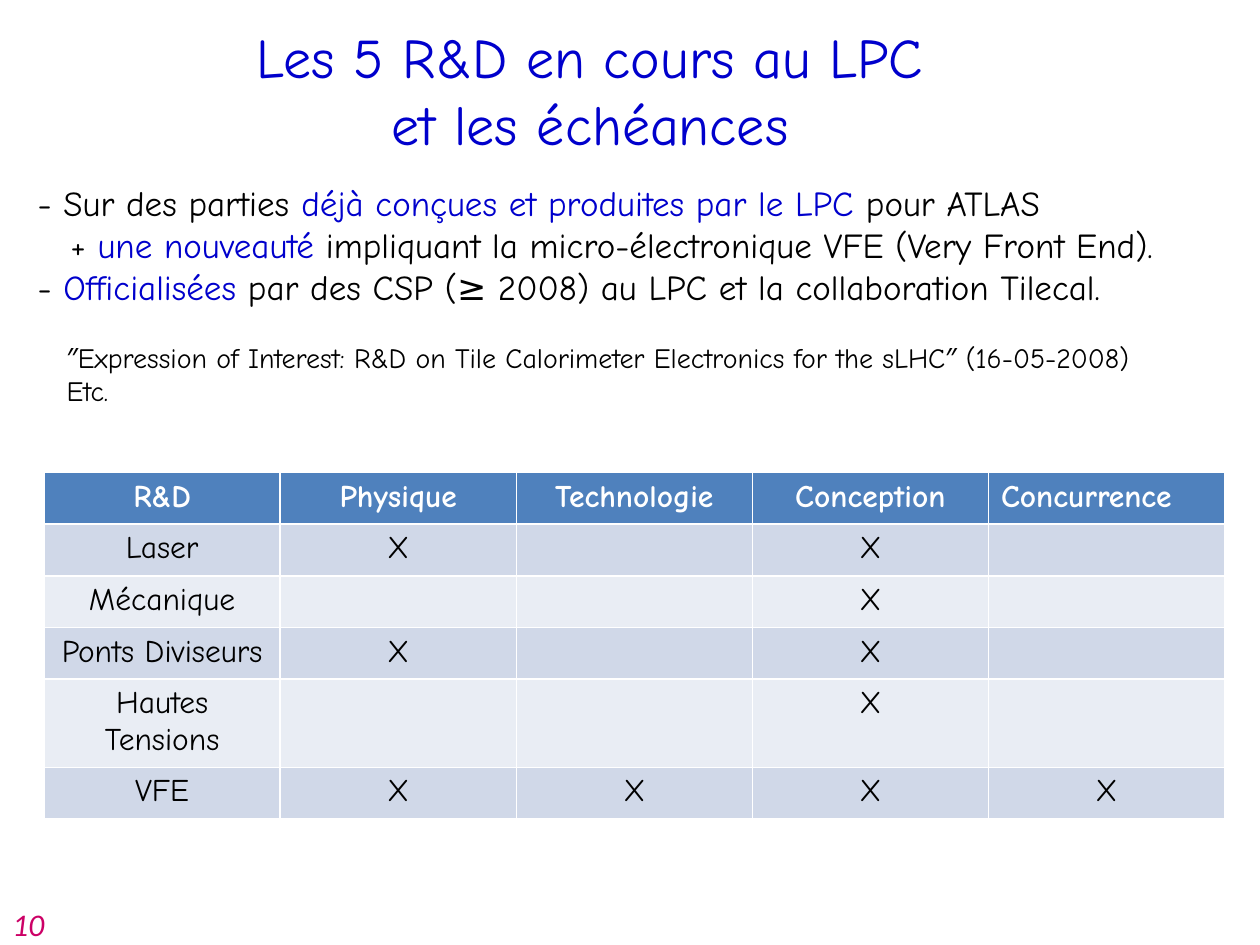
from lxml import etree
from pptx import Presentation
from pptx import util as u
from pptx.dml.color import RGBColor
from pptx.enum import text
from pptx.oxml import ns

BLUE = RGBColor(0x00, 0x00, 0xCC)
BLACK = RGBColor(0x00, 0x00, 0x00)
WHITE = RGBColor(0xFF, 0xFF, 0xFF)
PINK = RGBColor(0xCC, 0x00, 0x66)
HEADER_FILL = RGBColor(0x4F, 0x81, 0xBD)
BAND_FILLS = [RGBColor(0xE9, 0xED, 0xF4), RGBColor(0xD0, 0xD8, 0xE8)]
CENTER, LEFT = text.PP_ALIGN.CENTER, text.PP_ALIGN.LEFT

presentation = Presentation()
presentation.slide_width = u.Inches(10)
presentation.slide_height = u.Inches(7.5)
slide = presentation.slides.add_slide(presentation.slide_layouts[6])


def write_run(paragraph, words, color, **formats):
    run = paragraph.add_run()
    run.text = words
    run.font.color.rgb = color
    for name, value in ({"name": "Comic Neue"} | formats).items():
        setattr(run.font, name, value)
    return run


def add_text(box, lines, align=LEFT, wrap=True, **formats):
    shape = slide.shapes.add_textbox(*(u.Inches(length) for length in box))
    frame = shape.text_frame
    frame.word_wrap = wrap
    frame.auto_size = text.MSO_AUTO_SIZE.SHAPE_TO_FIT_TEXT
    for index, line in enumerate(lines):
        paragraph = frame.paragraphs[0] if index == 0 else frame.add_paragraph()
        paragraph.alignment = align
        for words, color in line:
            write_run(paragraph, words, color, **formats)
    return frame


title = add_text(
    (1.82, 0.13, 5.73, 1.18),
    [[("Les 5 R&D en cours au LPC", BLUE)], [("et les échéances", BLUE)]],
    CENTER, size=u.Pt(32))
for paragraph in title.paragraphs:
    properties = paragraph.runs[0].font.fill._xPr
    effects = etree.Element(ns.qn("a:effectLst"))
    shadow = etree.SubElement(effects, ns.qn("a:outerShdw"), blurRad="38100",
                              dist="38100", dir="2700000", algn="tl")
    tint = etree.SubElement(shadow, ns.qn("a:srgbClr"), val="C0C0C0")
    properties.find(ns.qn("a:solidFill")).addnext(effects)

body = add_text(
    (0.2, 1.39, 9.64, 1.11),
    [[("- Sur des parties ", BLACK),
      ("déjà conçues et produites par le LPC ", BLUE), ("pour ATLAS", BLACK)],
     [("+ ", BLACK), ("une nouveauté ", BLUE),
      ("impliquant la micro-électronique VFE (Very Front End).", BLACK)],
     [("- ", BLACK), ("Officialisées", BLUE),
      (" par des CSP (≥ 2008) au LPC et la collaboration Tilecal.", BLACK)]],
    size=u.Pt(20))
body.paragraphs[1]._p.get_or_add_pPr().set("marL", str(u.Inches(0.26)))

rows = [
    ["R&D", "Physique", "Technologie", "Conception", "Concurrence"],
    ["Laser", "X", "", "X", ""],
    ["Mécanique", "", "", "X", ""],
    ["Ponts Diviseurs", "X", "", "X", ""],
    ["Hautes Tensions", "", "", "X", ""],
    ["VFE", "X", "X", "X", "X"],
]
row_height = u.Inches(0.41)
table = slide.shapes.add_table(
    len(rows), len(rows[0]), u.Inches(0.35), u.Inches(3.75),
    u.Inches(9.37), row_height * len(rows)).table
for row_index, labels in enumerate(rows):
    table.rows[row_index].height = row_height
    header = row_index == 0
    for column_index, label in enumerate(labels):
        cell = table.cell(row_index, column_index)
        cell.fill.solid()
        cell.fill.fore_color.rgb = HEADER_FILL if header else BAND_FILLS[row_index % 2]
        paragraph = cell.text_frame.paragraphs[0]
        paragraph.alignment = LEFT if label == "Concurrence" else CENTER
        if label:
            write_run(paragraph, label, WHITE if header else BLACK,
                      size=u.Pt(18), bold=header)

add_text(
    (0.43, 2.65, 9.57, 0.64),
    [[("″Expression of Interest: R&D on Tile Calorimeter Electronics "
       "for the sLHC″ (16-05-2008)", BLACK)], [("Etc.", BLACK)]],
    size=u.Pt(16))
add_text((0, 7.13, 0.46, 0.4), [[("10", PINK)]], wrap=False,
         name="Calibri", size=u.Pt(18), italic=True)

presentation.save("out.pptx")
